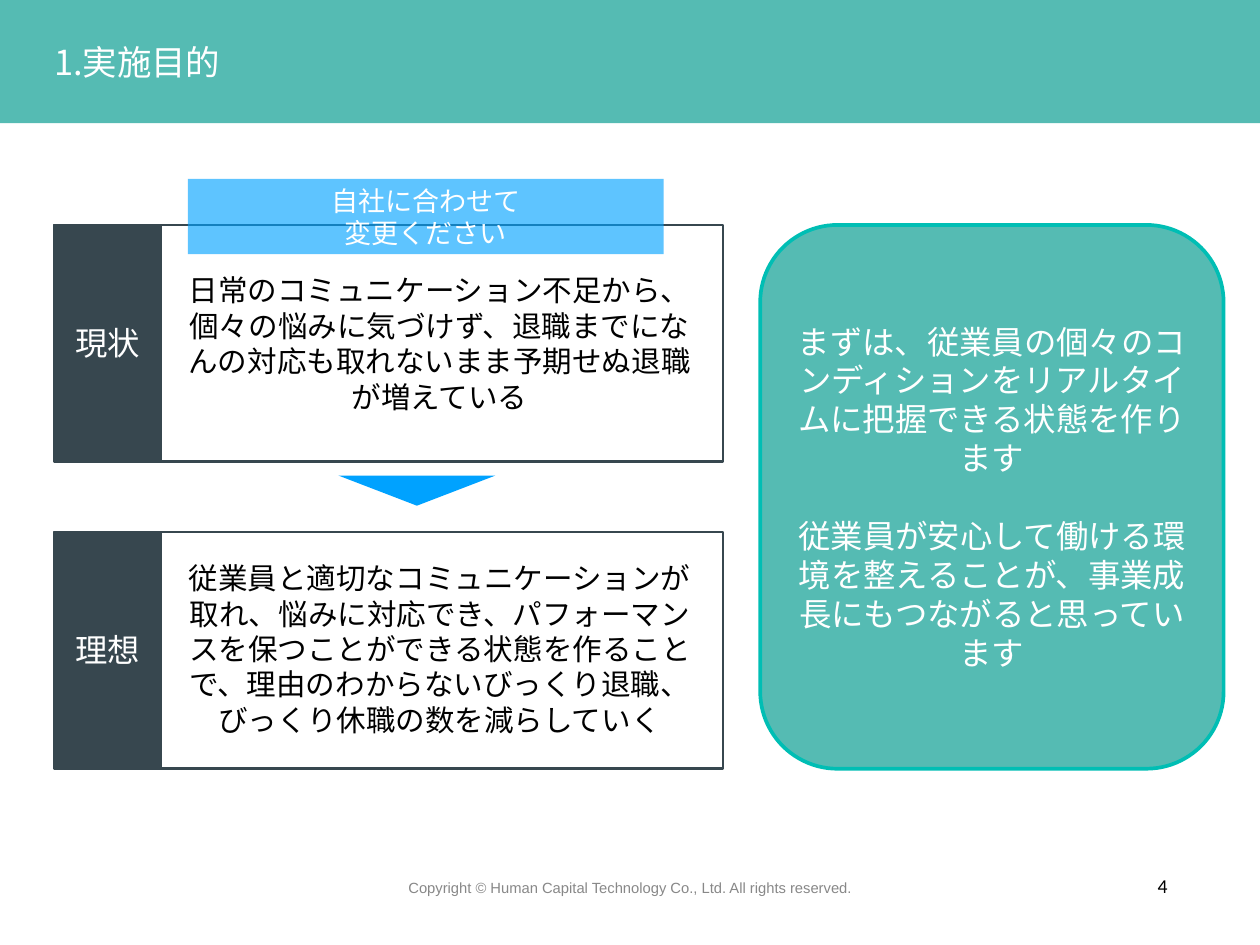
from dataclasses import dataclass

from lxml import etree
from pptx import Presentation
from pptx.dml.color import RGBColor
from pptx.enum.shapes import MSO_SHAPE
from pptx.enum.text import MSO_ANCHOR, PP_ALIGN
from pptx.oxml.ns import qn
from pptx.util import Inches, Pt

RECT = MSO_SHAPE.RECTANGLE
ROUNDED = MSO_SHAPE.ROUNDED_RECTANGLE
TRIANGLE = MSO_SHAPE.ISOSCELES_TRIANGLE
MIDDLE, TOP = MSO_ANCHOR.MIDDLE, MSO_ANCHOR.TOP
CENTER, LEFT = PP_ALIGN.CENTER, PP_ALIGN.LEFT

COLORS = {
    "teal": "55BBB3",
    "teal_edge": "00BEB4",
    "slate": "37474F",
    "blue": "00A2FF",
    "white": "FFFFFF",
    "black": "000000",
    "grey": "888888",
}
JAPANESE = "Noto Sans CJK JP"
LINE_PITCH = 1.2

Box = tuple[float, float, float, float]


@dataclass(frozen=True)
class TextStyle:
    size: float
    color: str
    font: str = JAPANESE
    align: int = CENTER
    anchor: int = MIDDLE
    inset: float = 0.06
    wrap: bool = True
    gap: float = 0


@dataclass(frozen=True)
class Situation:
    label: str
    description: str
    top: float
    text_top: float
    text_height: float


TITLE = TextStyle(28, "white", align=LEFT, inset=0, wrap=False)
LABEL = TextStyle(26.3, "white", inset=0.1)
DESCRIPTION = TextStyle(24, "black")
ACTION = TextStyle(26.3, "white", inset=0.05, gap=32)
HINT = TextStyle(22, "white")
COPYRIGHT = TextStyle(12, "grey", font="Arial", inset=0.05)
PAGE_NUMBER = TextStyle(16, "black", font="Calibri", anchor=TOP)

SITUATIONS = [
    Situation(
        "現状",
        "日常のコミュニケーション不足から、個々の悩みに気づけず、"
        "退職までになんの対応も取れないまま予期せぬ退職が増えている",
        2.54, 3.01, 1.73,
    ),
    Situation(
        "理想",
        "従業員と適切なコミュニケーションが取れ、悩みに対応でき、"
        "パフォーマンスを保つことができる状態を作ることで、"
        "理由のわからないびっくり退職、びっくり休職の数を減らしていく",
        6.01, 6.26, 2.13,
    ),
]
ACTION_TEXT = (
    "まずは、従業員の個々のコンディションをリアルタイムに把握できる状態を作ります\n"
    "従業員が安心して働ける環境を整えることが、事業成長にもつながると思っています"
)


def rgb(name: str) -> RGBColor:
    return RGBColor.from_string(COLORS[name])


def write(shape, text: str, style: TextStyle) -> None:
    frame = shape.text_frame
    frame.text = text
    frame.word_wrap = style.wrap
    frame.vertical_anchor = style.anchor
    frame.margin_left = frame.margin_right = Inches(style.inset)
    frame.margin_top = frame.margin_bottom = Inches(style.inset)
    for index, paragraph in enumerate(frame.paragraphs):
        paragraph.alignment = style.align
        if style.font == JAPANESE:
            paragraph.line_spacing = Pt(round(style.size * LINE_PITCH, 1))
        if index and style.gap:
            paragraph.space_before = Pt(style.gap)
        for run in paragraph.runs:
            run.font.size = Pt(style.size)
            run.font.name = style.font
            run.font.color.rgb = rgb(style.color)
            east_asian = etree.SubElement(run.font._element, qn("a:ea"))
            east_asian.set("typeface", style.font)


def add_text(slide, box: Box, text: str, style: TextStyle) -> None:
    write(slide.shapes.add_textbox(*map(Inches, box)), text, style)


def add_block(slide, preset: int, box: Box, fill: str | None = None,
              edge: str | None = None, edge_width: float = 2):
    """Draw a preset shape; without a fill or edge colour that part is empty."""
    block = slide.shapes.add_shape(preset, *map(Inches, box))
    block.shadow.inherit = False
    if fill:
        block.fill.solid()
        block.fill.fore_color.rgb = rgb(fill)
    else:
        block.fill.background()
    if edge:
        block.line.color.rgb = rgb(edge)
        block.line.width = Pt(edge_width)
    else:
        block.line.fill.background()
    return block


def set_opacity(block, percent: int) -> None:
    color = block._element.spPr.find(qn("a:solidFill")).find(qn("a:srgbClr"))
    etree.SubElement(color, qn("a:alpha")).set("val", str(percent * 1000))


def add_situation(slide, situation: Situation) -> None:
    label = add_block(slide, RECT, (0.61, situation.top, 1.21, 2.65), "slate", "slate")
    write(label, situation.label, LABEL)
    add_block(slide, RECT, (0.61, situation.top, 7.55, 2.67), edge="slate")
    add_text(slide, (2.04, situation.text_top, 5.84, situation.text_height),
             situation.description, DESCRIPTION)


def main() -> None:
    presentation = Presentation()
    presentation.slide_width = Inches(14.22)
    presentation.slide_height = Inches(10.67)
    slide = presentation.slides.add_slide(presentation.slide_layouts[6])

    add_block(slide, RECT, (0, 0, 14.22, 1.39), "teal")
    add_text(slide, (0.61, 0.46, 5.19, 0.47), "1.実施目的", TITLE)

    for situation in SITUATIONS:
        add_situation(slide, situation)
    arrow = add_block(slide, TRIANGLE, (3.82, 5.37, 1.77, 0.34), "blue")
    arrow.rotation = 180

    action = add_block(slide, ROUNDED, (8.58, 2.54, 5.23, 6.14), "teal", "teal_edge", 3)
    write(action, ACTION_TEXT, ACTION)

    hint = add_block(slide, RECT, (2.12, 2.02, 5.37, 0.85), "blue")
    set_opacity(hint, 63)
    write(hint, "自社に合わせて\n変更ください", HINT)

    add_text(slide, (3.9, 9.88, 6.43, 0.29),
             "Copyright © Human Capital Technology Co., Ltd. All rights reserved.",
             COPYRIGHT)
    add_text(slide, (12.7, 9.81, 0.84, 0.38), "4", PAGE_NUMBER)

    presentation.save("out.pptx")


if __name__ == "__main__":
    main()
